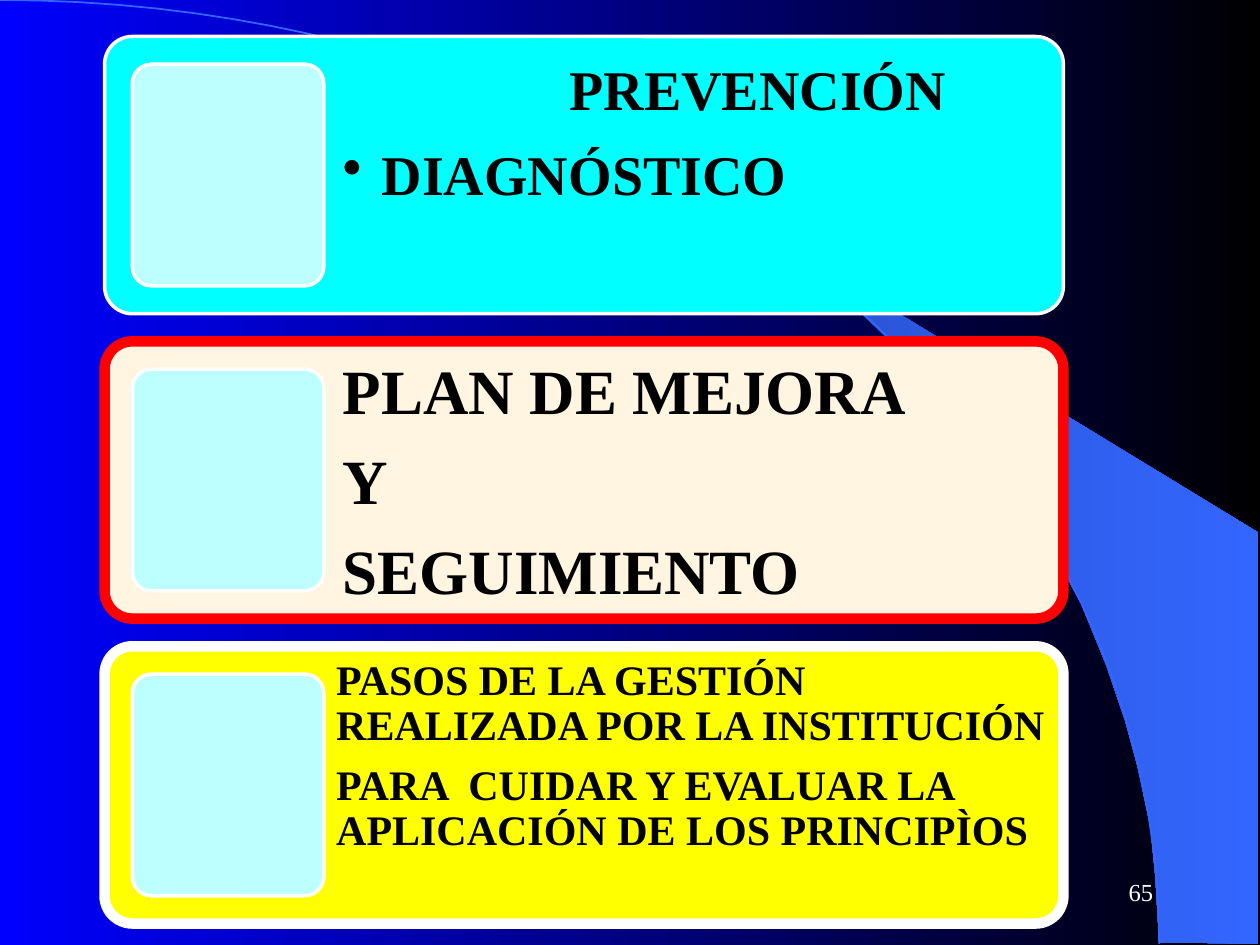
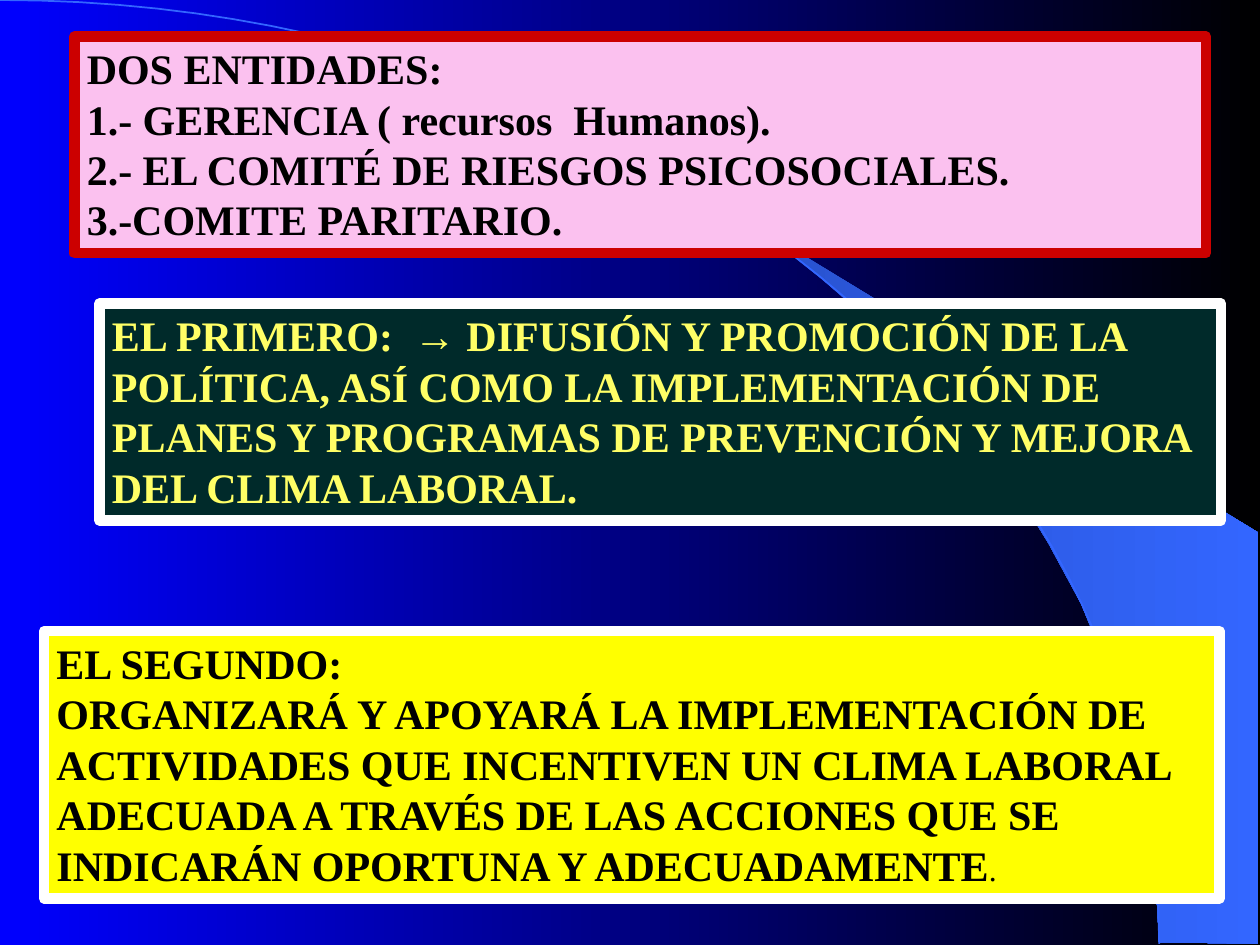
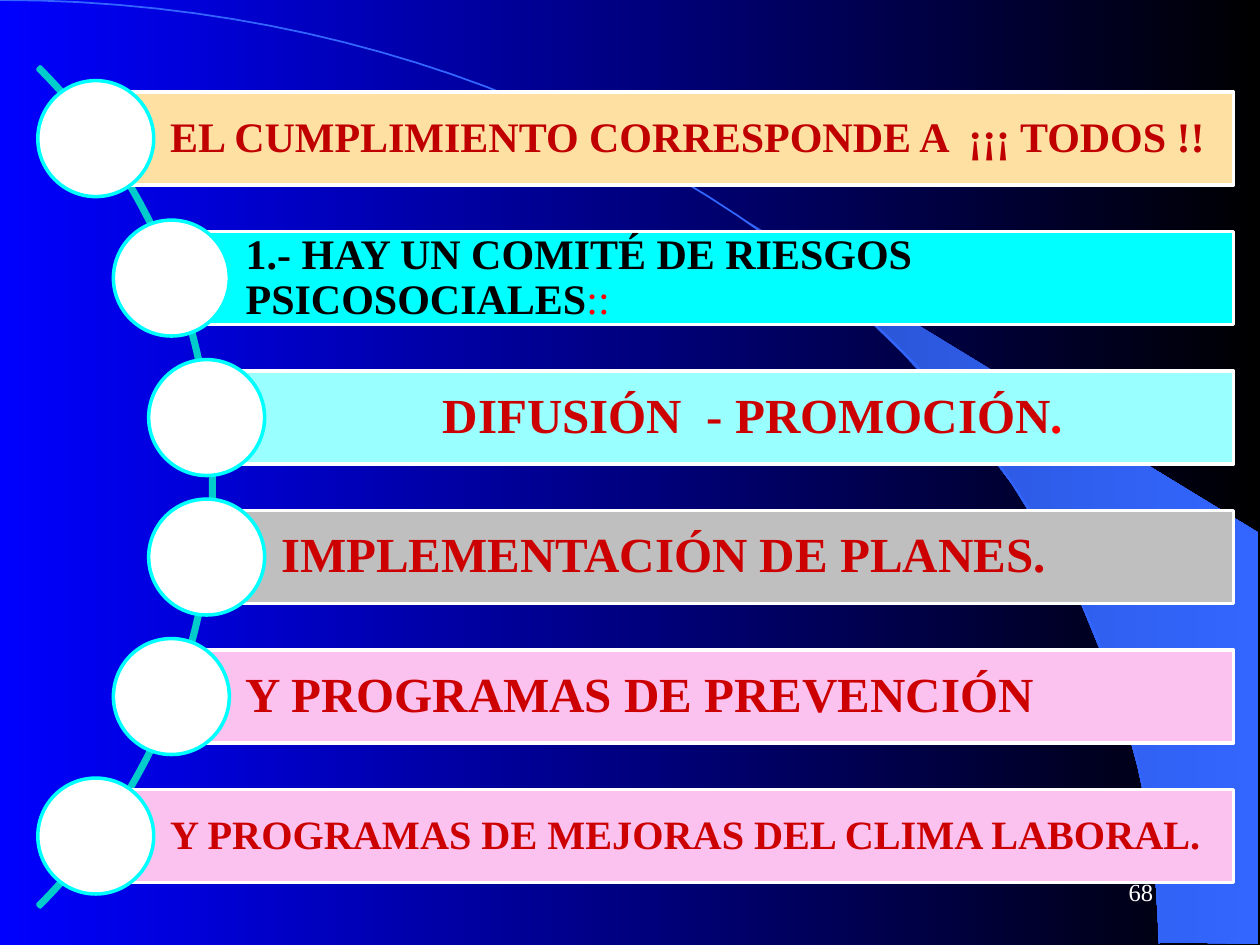
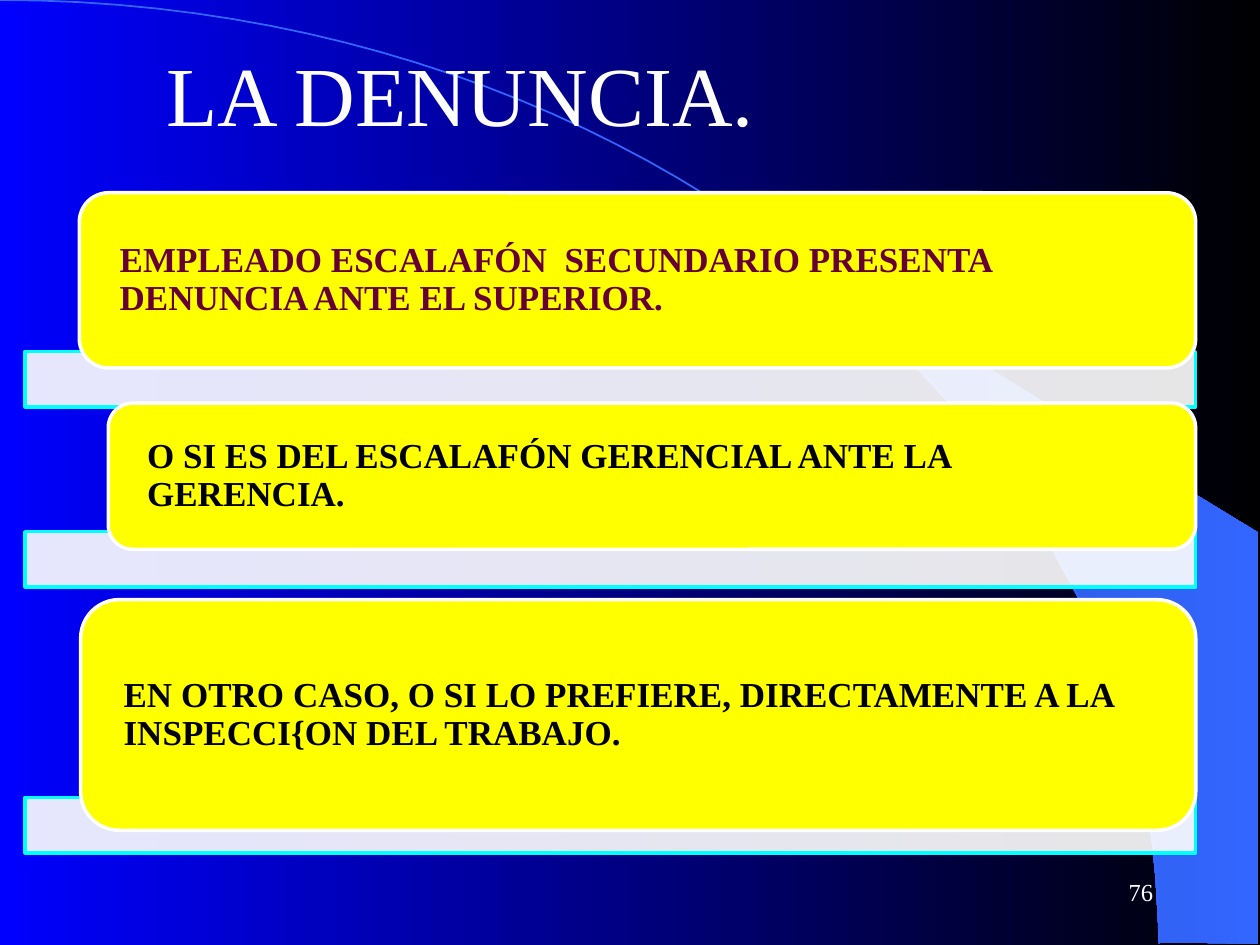
from lxml.etree import SubElement
from pptx import Presentation
from pptx.dml.color import RGBColor
from pptx.enum.shapes import MSO_SHAPE
from pptx.enum.text import MSO_ANCHOR, MSO_AUTO_SIZE, PP_ALIGN
from pptx.oxml.ns import qn
from pptx.util import Inches, Pt

# Colours
BLACK = RGBColor(0x00, 0x00, 0x00)
WHITE = RGBColor(0xFF, 0xFF, 0xFF)
BLUE = RGBColor(0x00, 0x00, 0xFF)
SWOOSH_DARK = RGBColor(0x28, 0x51, 0xCC)
SWOOSH = RGBColor(0x33, 0x66, 0xFF)
CYAN = RGBColor(0x00, 0xFF, 0xFF)
PALE_CYAN = RGBColor(0xBD, 0xFF, 0xFF)
LIGHT_CYAN = RGBColor(0x99, 0xFF, 0xFF)
TEAL = RGBColor(0x00, 0xCC, 0xCC)
DARK_TEAL = RGBColor(0x00, 0x2A, 0x2A)
YELLOW = RGBColor(0xFF, 0xFF, 0x00)
LEMON = RGBColor(0xFF, 0xFF, 0x66)
CREAM = RGBColor(0xFF, 0xF5, 0xE0)
SAND = RGBColor(0xFF, 0xE0, 0xA3)
PINK = RGBColor(0xFB, 0xC1, 0xEF)
GRAY = RGBColor(0xBF, 0xBF, 0xBF)
RED = RGBColor(0xFF, 0x00, 0x00)
DARK_RED = RGBColor(0xCC, 0x00, 0x00)
BRICK = RGBColor(0xC0, 0x00, 0x00)
WINE = RGBColor(0x66, 0x00, 0x33)

FONT = "Times New Roman"
INSETS = (0.1, 0.05, 0.1, 0.05)
SWOOSH_POINTS = [
    (9.2, 7.48), (9.99, 7.49), (9.99, 4.23), (5.89, 1.73), (6.24, 1.99),
    (6.53, 2.22), (6.85, 2.5), (7.16, 2.8), (7.62, 3.3), (8.03, 3.84),
    (8.32, 4.31), (8.58, 4.79), (8.78, 5.28), (8.93, 5.72), (9.03, 6.09),
    (9.13, 6.56), (9.17, 6.96),
]


def bezier(p0, p1, p2, p3, steps=48):
    """Points along a cubic curve."""
    points = []
    for i in range(steps + 1):
        t = i / steps
        u = 1 - t
        points.append(tuple(
            u**3 * a + 3 * u * u * t * b + 3 * u * t * t * c + t**3 * d
            for a, b, c, d in zip(p0, p1, p2, p3)))
    return points


class Deck:
    """Holds the presentation style and the current slide."""

    def __init__(self):
        self.prs = Presentation()
        self.prs.slide_width = Inches(10)
        self.prs.slide_height = Inches(7.5)
        self.slide = None
        self.gradient(self.prs.slide_master.background.fill, BLUE, BLACK)

    def new_slide(self, number=None):
        first = self.slide is None
        self.slide = self.prs.slides.add_slide(self.prs.slide_layouts[6])
        if first:
            self.master_art()
        if number:
            self.text((7.17, 6.83, 2.08, 0.5), [str(number)], size=14, bold=False,
                      color=WHITE, align=PP_ALIGN.RIGHT, anchor=MSO_ANCHOR.MIDDLE,
                      wrap=False)

    def master_art(self):
        """Draw the swoosh and the arc, then hand them to the master."""
        swoosh = self.outline(SWOOSH_POINTS, True)
        self.gradient(swoosh.fill, SWOOSH_DARK, SWOOSH)
        swoosh.line.fill.background()
        arc = self.outline(bezier((0, 0), (5.08, 0), (9.2, 3.35), (9.2, 7.49)), False)
        self.paint(arc, None, SWOOSH, 1)
        tree = self.prs.slide_master.element.cSld.spTree
        for i, sp in enumerate((swoosh, arc)):
            sp.element.nvSpPr.cNvPr.set("id", str(101 + i))
            tree.append(sp.element)

    def gradient(self, fill, start, end):
        fill.gradient()
        fill.gradient_angle = 0
        for stop, color in zip(fill.gradient_stops, (start, end)):
            stop.color.rgb = color

    def outline(self, points, close):
        points = [(Inches(x), Inches(y)) for x, y in points]
        builder = self.slide.shapes.build_freeform(*points[0])
        builder.add_line_segments(points[1:], close=close)
        sp = builder.convert_to_shape()
        sp.shadow.inherit = False
        return sp

    def paint(self, sp, fill, line, width):
        if fill is None:
            sp.fill.background()
        else:
            sp.fill.solid()
            sp.fill.fore_color.rgb = fill
        sp.line.color.rgb = line
        sp.line.width = Pt(width)

    def shape(self, kind, box, fill, line=WHITE, width=2, adj=(), opacity=None):
        sp = self.slide.shapes.add_shape(kind, *map(Inches, box))
        sp.shadow.inherit = False
        for i, value in enumerate(adj):
            sp.adjustments[i] = value
        self.paint(sp, fill, line, width)
        if opacity:
            clr = sp.element.spPr.find(qn("a:solidFill")).find(qn("a:srgbClr"))
            SubElement(clr, qn("a:alpha")).set("val", str(opacity * 1000))
        return sp

    def text(self, box, paragraphs, **style):
        tb = self.slide.shapes.add_textbox(*map(Inches, box))
        self.fill_text(tb, paragraphs, **style)
        return tb

    def fill_text(self, sp, paragraphs, size=24, color=BLACK, bold=True,
                  align=PP_ALIGN.LEFT, anchor=MSO_ANCHOR.TOP, insets=INSETS,
                  wrap=True, tight=False, grow=False):
        """A paragraph is a string or a list of (text, format) runs."""
        tf = sp.text_frame
        sides = ("margin_left", "margin_top", "margin_right", "margin_bottom")
        frame = dict(zip(sides, map(Inches, insets)))
        frame.update(
            word_wrap=wrap, vertical_anchor=anchor,
            auto_size=MSO_AUTO_SIZE.SHAPE_TO_FIT_TEXT if grow else MSO_AUTO_SIZE.NONE)
        for key, value in frame.items():
            setattr(tf, key, value)
        for i, runs in enumerate(paragraphs):
            p = tf.paragraphs[0] if i == 0 else tf.add_paragraph()
            p.alignment = align
            if tight:
                p.line_spacing = 0.9
                if i < len(paragraphs) - 1:
                    p.space_after = Pt(0.35 * size)
            for words, extra in [(runs, {})] if isinstance(runs, str) else runs:
                r = p.add_run()
                r.text = words
                fmt = {"name": FONT, "size": Pt(size), "bold": bold, "color": color}
                fmt.update(extra)
                r.font.color.rgb = fmt.pop("color")
                for key, value in fmt.items():
                    setattr(r.font, key, value)

    def indent(self, p, left, hanging=0, bullet=None):
        pPr = p._p.get_or_add_pPr()
        pPr.set("marL", str(Inches(left)))
        pPr.set("indent", str(-Inches(hanging)))
        if bullet:
            SubElement(pPr, qn("a:buChar")).set("char", bullet)


def prevention_slide(deck):
    deck.new_slide(65)
    panels = [
        (CYAN, WHITE, 2, 32, (0.15, 0.2, 0.15, 0.15), ["PREVENCIÓN", "DIAGNÓSTICO"]),
        (CREAM, RED, 6, 36, (0.15,) * 4, ["PLAN DE MEJORA", "Y", "SEGUIMIENTO"]),
        (YELLOW, WHITE, 6, 24, (0.1,) * 4, [
            "PASOS DE LA GESTIÓN REALIZADA POR LA INSTITUCIÓN",
            "PARA  CUIDAR Y EVALUAR LA APLICACIÓN DE LOS PRINCIPÌOS"]),
    ]
    boxes = []
    for i, (fill, line, width, size, insets, paragraphs) in enumerate(panels):
        top = 0.29 + 2.42 * i
        deck.shape(MSO_SHAPE.ROUNDED_RECTANGLE, (0.83, top, 7.61, 2.2), fill, line,
                   width, adj=(0.1,))
        boxes.append(deck.text((2.57, top, 5.87, 2.2), paragraphs, size=size,
                               insets=insets, tight=True))
        deck.shape(MSO_SHAPE.ROUNDED_RECTANGLE, (1.05, top + 0.22, 1.52, 1.76),
                   PALE_CYAN, adj=(0.1,))
    heading, item = boxes[0].text_frame.paragraphs
    heading.space_after = Pt(14)
    deck.indent(heading, 1.8)
    item.level = 1
    deck.indent(item, 0.31, 0.31, "•")


def entities_slide(deck):
    deck.new_slide()
    notices = [
        ((0.59, 0.29, 8.98, 1.72), PINK, DARK_RED, BLACK, [
            "DOS ENTIDADES:",
            "1.- GERENCIA ( recursos  Humanos).",
            "2.- EL COMITÉ DE RIESGOS PSICOSOCIALES.",
            "3.-COMITE PARITARIO."]),
        ((0.79, 2.41, 8.9, 1.72), DARK_TEAL, WHITE, LEMON, [
            "EL PRIMERO:  → DIFUSIÓN Y PROMOCIÓN DE LA POLÍTICA, ASÍ COMO LA "
            "IMPLEMENTACIÓN DE PLANES Y PROGRAMAS DE PREVENCIÓN Y MEJORA DEL "
            "CLIMA LABORAL."]),
        ((0.35, 5.01, 9.33, 2.12), YELLOW, WHITE, BLACK, [
            "EL SEGUNDO:",
            [("ORGANIZARÁ Y APOYARÁ LA IMPLEMENTACIÓN DE ACTIVIDADES QUE "
              "INCENTIVEN UN CLIMA LABORAL ADECUADA A TRAVÉS DE LAS ACCIONES "
              "QUE SE  INDICARÁN OPORTUNA Y ADECUADAMENTE", {}),
             (".", {"size": Pt(18), "bold": False})]]),
    ]
    for box, fill, line, color, paragraphs in notices:
        sp = deck.shape(MSO_SHAPE.RECTANGLE, box, fill, line, 6)
        deck.fill_text(sp, paragraphs, color=color, grow=True)


def compliance_slide(deck):
    deck.new_slide(68)
    deck.shape(MSO_SHAPE.BLOCK_ARC, (-7.73, -0.85, 9.43, 9.43), None, TEAL,
               adj=(189, 27, 0.003))
    left, center = PP_ALIGN.LEFT, PP_ALIGN.CENTER
    bars = [
        (0.3, SAND, 24, BRICK, left, "EL CUMPLIMIENTO CORRESPONDE A  ¡¡¡ TODOS !!"),
        (0.9, CYAN, 24, BLACK, left, [
            ("1.- HAY UN COMITÉ DE RIESGOS PSICOSOCIALES", {}),
            ("::", {"color": RED, "bold": False})]),
        (1.18, LIGHT_CYAN, 28, DARK_RED, center, [
            ("DIFUSIÓN  - PROMOCIÓN", {}), (".", {"color": RED})]),
        (1.18, GRAY, 28, DARK_RED, left, "IMPLEMENTACIÓN DE PLANES."),
        (0.9, PINK, 28, DARK_RED, left, "Y PROGRAMAS DE PREVENCIÓN"),
        (0.3, PINK, 23, DARK_RED, left, "Y PROGRAMAS DE MEJORAS DEL CLIMA LABORAL."),
    ]
    for i, (dot_left, fill, size, color, align, words) in enumerate(bars):
        top = 0.73 + 1.107 * i
        bar_left = dot_left + 0.46
        box = (bar_left, top, 9.79 - bar_left, 0.74)
        deck.shape(MSO_SHAPE.RECTANGLE, box, fill)
        deck.text(box, [words], size=size, color=color, align=align, tight=True,
                  anchor=MSO_ANCHOR.MIDDLE, insets=(0.59, 0.07, 0.07, 0.07))
        deck.shape(MSO_SHAPE.OVAL, (dot_left, top - 0.09, 0.92, 0.92), WHITE, CYAN)


def complaint_slide(deck):
    deck.new_slide(76)
    deck.text((1.22, 0.29, 6.69, 0.91), ["LA DENUNCIA."], size=48, color=WHITE,
              bold=False, grow=True)
    right = 9.49
    steps = [
        (2.79, 0.63, 1.53, 1.39, WINE,
         "EMPLEADO ESCALAFÓN  SECUNDARIO PRESENTA DENUNCIA ANTE EL SUPERIOR."),
        (4.22, 0.86, 3.2, 1.16, BLACK,
         "O SI ES DEL ESCALAFÓN GERENCIAL ANTE LA GERENCIA."),
        (6.33, 0.64, 4.76, 1.83, BLACK,
         "EN OTRO CASO, O SI LO PREFIERE, DIRECTAMENTE A LA INSPECCI{ON DEL TRABAJO."),
    ]
    for strip_top, left, top, height, color, words in steps:
        width = right - left
        deck.shape(MSO_SHAPE.RECTANGLE, (0.2, strip_top, 9.29, 0.44), WHITE, CYAN,
                   opacity=90)
        deck.shape(MSO_SHAPE.ROUNDED_RECTANGLE, (left, top, width, height), YELLOW)
        pad = 0.05 * height  # keeps the text clear of the round corners
        deck.text((left + pad, top + pad, width - 2 * pad, height - 2 * pad), [words],
                  size=20, color=color, tight=True, anchor=MSO_ANCHOR.MIDDLE,
                  insets=(0.25, 0, 0.25, 0))


def main():
    deck = Deck()
    for build in (prevention_slide, entities_slide, compliance_slide, complaint_slide):
        build(deck)
    deck.prs.save("out.pptx")


if __name__ == "__main__":
    main()
